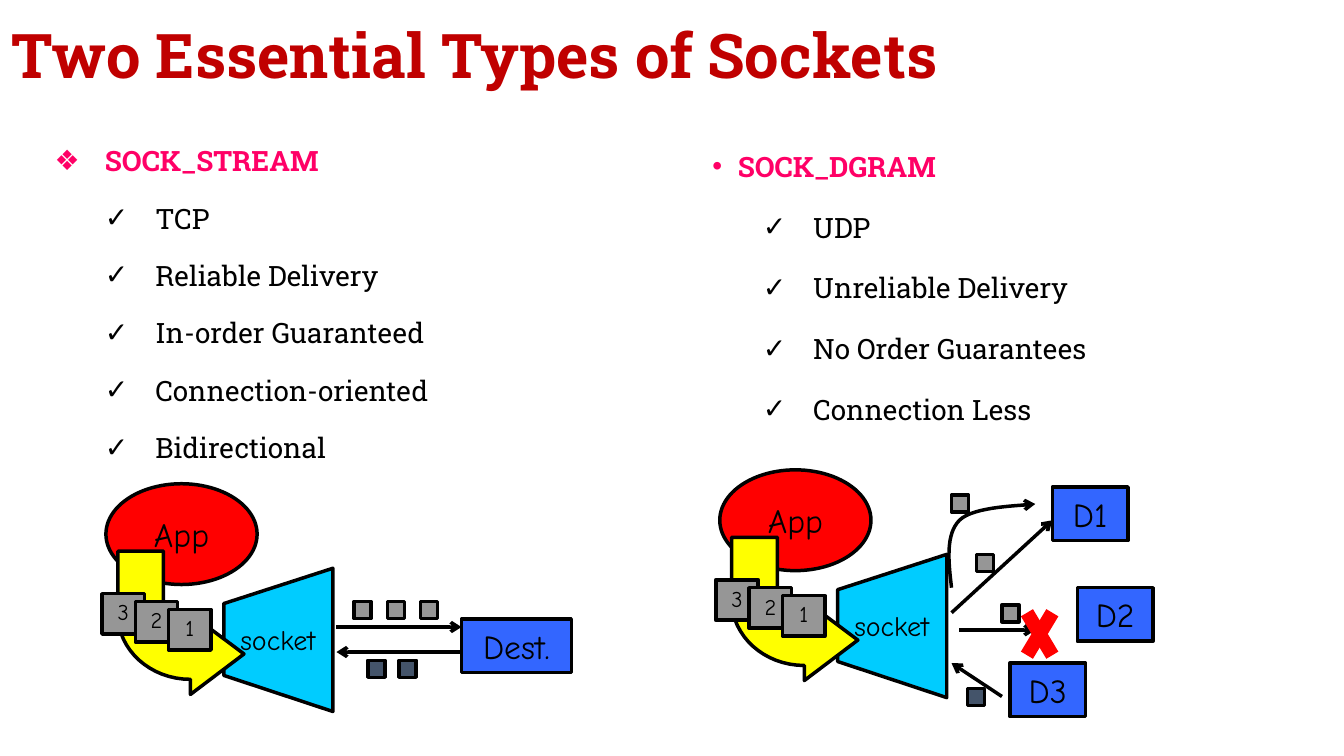
from lxml import etree
from pptx import Presentation
from pptx.dml.color import RGBColor
from pptx.enum.shapes import MSO_CONNECTOR, MSO_SHAPE
from pptx.enum.text import MSO_ANCHOR, MSO_AUTO_SIZE, PP_ALIGN
from pptx.oxml.ns import qn
from pptx.util import Cm, Pt

STRAIGHT = MSO_CONNECTOR.STRAIGHT
OVAL, RECTANGLE = MSO_SHAPE.OVAL, MSO_SHAPE.RECTANGLE
TOP, MIDDLE = MSO_ANCHOR.TOP, MSO_ANCHOR.MIDDLE
LEFT, CENTER = PP_ALIGN.LEFT, PP_ALIGN.CENTER
NO_AUTOFIT = MSO_AUTO_SIZE.NONE

BLACK = RGBColor(0, 0, 0)
RED = RGBColor(0xFF, 0, 0)
DARK_RED = RGBColor(0xC0, 0, 0)
PINK = RGBColor(0xFF, 0, 0x66)
CYAN = RGBColor(0, 0xCC, 0xFF)
YELLOW = RGBColor(0xFF, 0xFF, 0)
BLUE = RGBColor(0x33, 0x66, 0xFF)
GREY = RGBColor(0x96, 0x96, 0x96)
SLATE = RGBColor(0x44, 0x54, 0x6A)


def curve(start, control1, control2, end, steps=16):
    """Return points along a cubic Bezier curve, without its start."""
    points = []
    for step in range(1, steps + 1):
        t = step / steps
        weights = ((1 - t) ** 3, 3 * t * (1 - t) ** 2, 3 * t * t * (1 - t), t ** 3)
        corners = (start, control1, control2, end)
        points.append(tuple(sum(weight * corner[axis]
                                for weight, corner in zip(weights, corners))
                            for axis in (0, 1)))
    return points


class SocketSlide:
    """Draws the elements of one slide in a shared style; lengths are in cm."""

    heading_font = "Roboto Slab"
    label_font = "Comic Neue"
    stroke = Pt(2.5)

    def __init__(self, deck):
        self.page = deck.slides.add_slide(deck.slide_layouts[3])
        self.shapes = self.page.shapes

    def format_run(self, paragraph, font, size, color, bold=False):
        for span in paragraph.runs:
            span.font.name = font
            span.font.size = Pt(size)
            span.font.color.rgb = color
            span.font.bold = bold

    def place(self, box, left, top, width, height, anchor):
        box.left, box.top = Cm(left), Cm(top)
        box.width, box.height = Cm(width), Cm(height)
        box.text_frame.word_wrap = True
        box.text_frame.auto_size = NO_AUTOFIT
        box.text_frame.vertical_anchor = anchor

    def title(self, text):
        box = self.shapes.title
        self.place(box, 0.03, 0.36, 31.52, 2.21, MIDDLE)
        box.text_frame.text = text
        paragraph = box.text_frame.paragraphs[0]
        paragraph.alignment = LEFT
        paragraph.line_spacing = 0.9
        self.format_run(paragraph, self.heading_font, 44, DARK_RED, True)

    def bullet(self, paragraph, mark, margin, hanging):
        properties = paragraph._p.get_or_add_pPr()
        properties.set("marL", str(Cm(margin)))
        properties.set("indent", str(-Cm(hanging)))
        etree.SubElement(properties, qn("a:buFont")).set("typeface", "Arial")
        etree.SubElement(properties, qn("a:buChar")).set("char", mark)

    def body(self, index, area, anchor, mark, hanging, spacing, lines):
        """Fill a body placeholder with a heading and its checked items."""
        box = self.page.placeholders[index]
        self.place(box, *area, anchor)
        box.text_frame.text = "\n".join(lines)
        heading, *items = box.text_frame.paragraphs
        self.bullet(heading, mark, hanging, hanging)
        heading.line_spacing = 2.0
        heading.space_before = Pt(0)
        self.format_run(heading, self.heading_font, 20, PINK, True)
        for item in items:
            item.level = 1
            self.bullet(item, "✓", 2.54, 1.27)
            item.line_spacing = spacing
            item.space_before = Pt(5)
            self.format_run(item, self.heading_font, 20, BLACK)

    def caption(self, box, text, size, anchor):
        frame = box.text_frame
        frame.word_wrap = True
        frame.vertical_anchor = anchor
        frame.text = text
        frame.paragraphs[0].alignment = CENTER
        self.format_run(frame.paragraphs[0], self.label_font, size, BLACK)

    def label(self, left, top, width, height, text, size, anchor=TOP):
        box = self.shapes.add_textbox(Cm(left), Cm(top), Cm(width), Cm(height))
        self.caption(box, text, size, anchor)

    def outline(self, shape):
        shape.shadow.inherit = False
        shape.line.color.rgb = BLACK
        shape.line.width = self.stroke

    def block(self, left, top, width, height, fill, kind=RECTANGLE,
              text="", size=24, anchor=MIDDLE):
        shape = self.shapes.add_shape(kind, Cm(left), Cm(top), Cm(width), Cm(height))
        shape.fill.solid()
        shape.fill.fore_color.rgb = fill
        self.outline(shape)
        if text:
            self.caption(shape, text, size, anchor)

    def packet(self, left, top, fill=GREY):
        self.block(left, top, 0.43, 0.43, fill)

    def destination(self, left, top, text, width=1.91):
        self.block(left, top, width, 1.35, BLUE, text=text)

    def arrowhead(self, line):
        etree.SubElement(line._get_or_add_ln(), qn("a:tailEnd")).set("type", "arrow")

    def freeform(self, points, fill=None):
        """Draw a filled outline, or an open path with an arrowhead."""
        (left, top), *others = [(Cm(x), Cm(y)) for x, y in points]
        builder = self.shapes.build_freeform(left, top)
        builder.add_line_segments(others, close=fill is not None)
        shape = builder.convert_to_shape()
        self.outline(shape)
        if fill is None:
            shape.fill.background()
            self.arrowhead(shape.line)
        else:
            shape.fill.solid()
            shape.fill.fore_color.rgb = fill

    def line(self, x1, y1, x2, y2, color=BLACK, width=stroke, arrow=True):
        connector = self.shapes.add_connector(STRAIGHT, Cm(x1), Cm(y1), Cm(x2), Cm(y2))
        connector.line.color.rgb = color
        connector.line.width = width
        if arrow:
            self.arrowhead(connector.line)
        etree.SubElement(connector._element.spPr, qn("a:effectLst"))

    def sender(self, left, top):
        """Draw the app feeding numbered packets into its socket."""
        def shift(points):
            return [(left + x, top + y) for x, y in points]

        self.block(left, top, 3.81, 2.54, RED, OVAL)
        self.label(left - 0.1, top + 0.64, 4.01, 1.27, "App", 24)
        funnel = [(5.72, 2.13), (2.97, 3.02), (2.97, 4.83), (5.72, 5.74)]
        self.freeform(shift(funnel), CYAN)
        self.label(left + 2.01, top + 3.38, 4.65, 1.09, "socket", 20, MIDDLE)
        bent_arrow = [
            (3.48, 4.29), (2.13, 5.31), (2.13, 4.93),
            *curve((2.13, 4.93), (1.12, 4.93), (0.3, 4.19), (0.3, 3.28)),
            (0.3, 1.7), (1.45, 1.7), (1.45, 3.28),
            *curve((1.45, 3.28), (1.45, 3.48), (1.75, 3.66), (2.13, 3.66)),
            (2.13, 3.28)]
        self.freeform(shift(bent_arrow), YELLOW)
        for order, number in enumerate("321"):
            self.block(left - 0.1 + 0.84 * order, top + 2.77 + 0.2 * order,
                       1.07, 1.02, GREY, text=number, size=16, anchor=TOP)


def draw_stream(slide):
    slide.sender(2.67, 12.19)
    for order in range(3):
        slide.packet(8.92 + 0.84 * order, 15.16)
    slide.line(8.48, 15.8, 11.63, 15.8)
    slide.destination(11.63, 15.6, "Dest.", 2.77)
    slide.line(11.63, 16.43, 8.48, 16.43)
    for left in (9.27, 10.06):
        slide.packet(left, 16.64, SLATE)


def draw_datagram(slide):
    slide.sender(18.14, 11.84)
    for left, top in ((23.98, 12.47), (24.61, 13.97), (25.25, 15.24)):
        slide.packet(left, top)
    slide.line(23.98, 15.44, 26.52, 13.11)
    for left, top, name in ((26.52, 12.27, "D1"), (25.45, 16.71, "D3"), (27.15, 14.81, "D2")):
        slide.destination(left, top, name)
    start, bend, end = (23.98, 14.81), (24.18, 13.11), (26.09, 12.7)
    slide.freeform([start, *curve(start, (23.9, 14.15), (23.83, 13.46), bend),
                    *curve(bend, (24.54, 12.75), (25.76, 12.75), end)])
    slide.line(24.18, 15.88, 26.09, 15.88)
    for x1, x2 in ((25.88, 26.52), (26.52, 25.88)):
        slide.line(x1, 15.44, x2, 16.51, RED, Pt(10), arrow=False)
    slide.line(25.25, 17.55, 23.98, 16.71)
    slide.packet(24.38, 17.35, SLATE)


def main():
    deck = Presentation()
    deck.slide_width, deck.slide_height = Cm(33.87), Cm(19.05)
    slide = SocketSlide(deck)
    slide.title("Two Essential Types of Sockets")
    slide.body(1, (1.12, 2.03, 14.07, 10.41), MIDDLE, "❖", 1.27, 1.5,
               ["SOCK_STREAM", "TCP", "Reliable Delivery", "In-order Guaranteed",
                "Connection-oriented", "Bidirectional"])
    slide.body(2, (17.7, 2.79, 16.17, 10.62), TOP, "•", 0.64, 1.6,
               ["SOCK_DGRAM", "UDP", "Unreliable Delivery", "No Order Guarantees",
                "Connection Less"])
    draw_stream(slide)
    draw_datagram(slide)
    deck.save("out.pptx")


if __name__ == "__main__":
    main()
